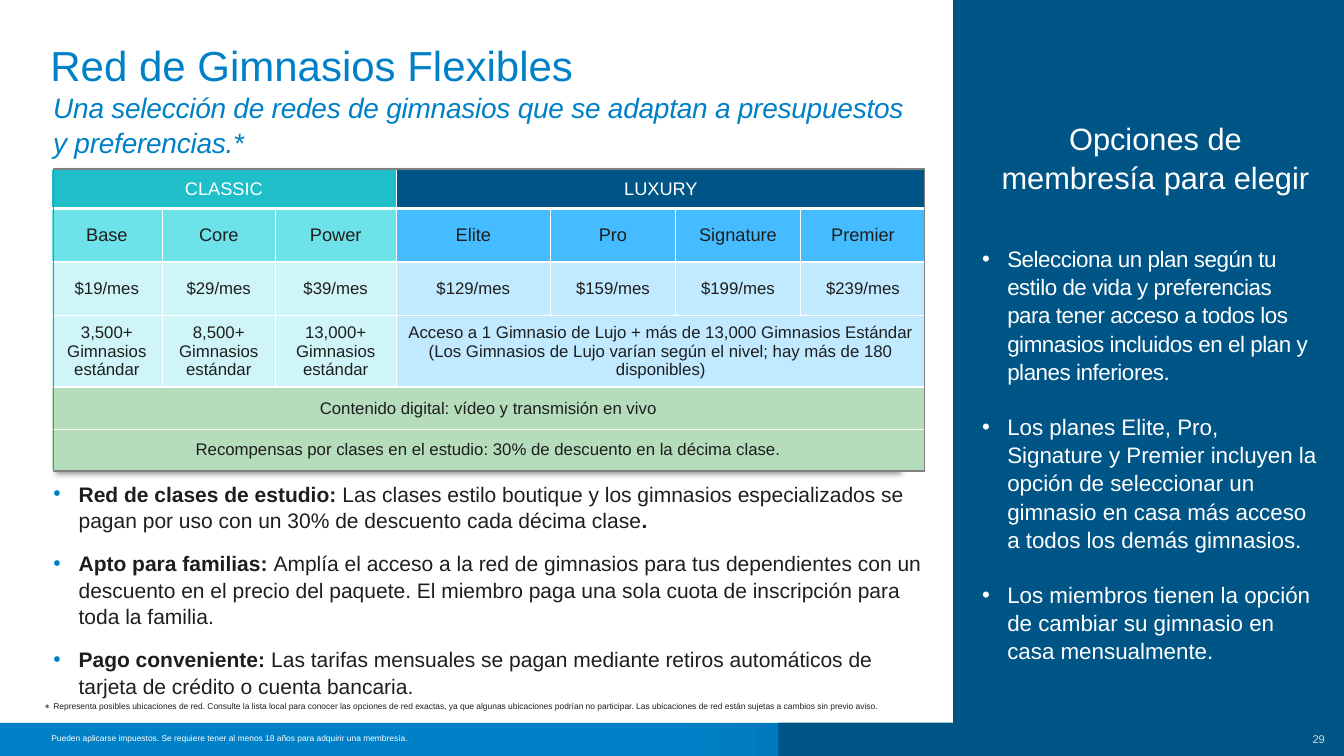
import dataclasses
import typing

import lxml.etree
import pptx
import pptx.dml.color
import pptx.enum.shapes
import pptx.enum.text
import pptx.oxml.ns
import pptx.util

Inches = pptx.util.Inches
Pt = pptx.util.Pt
Align = pptx.enum.text.PP_ALIGN
Anchor = pptx.enum.text.MSO_ANCHOR
Box = tuple[float, float, float, float]


@dataclasses.dataclass(frozen=True)
class Theme:
    font: str = "Arial"
    blue: str = "0080C7"
    navy: str = "005587"
    white: str = "FFFFFF"
    ink: str = "1E1E1E"
    number: str = "D9D9D9"
    frame: str = "808080"
    classic: tuple[str, str, str] = ("1FBFC9", "6EE2E9", "CFF5F8")
    luxury: tuple[str, str, str] = ("005587", "44BCFF", "C1E9FF")
    green: str = "B5DCBB"
    title: float = 30
    subtitle: float = 20
    heading: float = 22
    sidebar: float = 16
    body: float = 15
    plan: float = 13
    cell: float = 12
    small: float = 8
    fine: float = 6


THEME = Theme()


@dataclasses.dataclass(frozen=True)
class Panel:
    box: Box
    fill: str | None = None
    gradient_end: str | None = None
    line: str | None = None
    shadow: bool = False


@dataclasses.dataclass(frozen=True)
class Run:
    text: str
    bold: bool = False


@dataclasses.dataclass(frozen=True)
class TextBlock:
    box: Box
    paragraphs: list[list[Run]]
    size: float
    color: str
    align: Align = Align.LEFT
    anchor: Anchor = Anchor.TOP
    inset: tuple[float, float] = (0, 0)
    line_spacing: float = 1.0
    gap: float = 0
    bullet: str | None = None
    tracking: tuple[int, ...] = ()
    italic: bool = False


@dataclasses.dataclass(frozen=True)
class PlanCell:
    row: int
    column: int
    span: int
    text: str
    fill: str
    color: str = THEME.ink
    size: float = THEME.cell


def assign(target: typing.Any, values: dict[str, typing.Any]) -> None:
    for name, value in values.items():
        setattr(target, name, value)


def rgb(color: str) -> pptx.dml.color.RGBColor:
    return pptx.dml.color.RGBColor.from_string(color)


def add_element(parent: typing.Any, tag: str, **attributes: str) -> typing.Any:
    return lxml.etree.SubElement(parent, pptx.oxml.ns.qn(tag), attributes)


def add_panel(slide: typing.Any, panel: Panel) -> None:
    shape = slide.shapes.add_shape(pptx.enum.shapes.MSO_SHAPE.RECTANGLE, *map(Inches, panel.box))
    shape.shadow.inherit = False
    if panel.gradient_end:
        shape.fill.gradient()
        shape.fill.gradient_angle = 0
        for stop, color in zip(shape.fill.gradient_stops, (panel.fill, panel.gradient_end)):
            stop.color.rgb = rgb(color)
    elif panel.fill:
        shape.fill.solid()
        shape.fill.fore_color.rgb = rgb(panel.fill)
    else:
        shape.fill.background()
    if panel.line:
        shape.line.color.rgb = rgb(panel.line)
        shape.line.width = Pt(1.25)
    else:
        shape.line.fill.background()
    if panel.shadow:
        effects = shape.element.spPr.find(pptx.oxml.ns.qn("a:effectLst"))
        shadow = add_element(effects, "a:outerShdw", blurRad=str(Pt(4)), dist=str(Pt(3)), dir="2700000")
        add_element(add_element(shadow, "a:srgbClr", val="000000"), "a:alpha", val="40000")


def format_run(run: typing.Any, size: float, color: str, bold: bool = False, italic: bool = False) -> None:
    assign(run.font, {"name": THEME.font, "size": Pt(size), "bold": bold, "italic": italic})
    run.font.color.rgb = rgb(color)


def add_bullet(paragraph: typing.Any, color: str) -> None:
    properties = paragraph._p.get_or_add_pPr()
    assign(properties, {})
    properties.set("marL", str(Inches(0.25)))
    properties.set("indent", str(-Inches(0.25)))
    add_element(add_element(properties, "a:buClr"), "a:srgbClr", val=color)
    add_element(properties, "a:buFont", typeface=THEME.font)
    add_element(properties, "a:buChar", char="•")


def write_block(shape: typing.Any, block: TextBlock) -> None:
    assign(shape, dict(zip(("left", "top", "width", "height"), map(Inches, block.box))))
    frame = shape.text_frame
    side, end = map(Inches, block.inset)
    assign(frame, {"word_wrap": True, "auto_size": pptx.enum.text.MSO_AUTO_SIZE.NONE,
                   "vertical_anchor": block.anchor, "margin_left": side, "margin_right": side,
                   "margin_top": end, "margin_bottom": end})
    for index, runs in enumerate(block.paragraphs):
        paragraph = frame.add_paragraph() if index else frame.paragraphs[0]
        if block.bullet:
            add_bullet(paragraph, block.bullet)
        assign(paragraph, {"alignment": block.align, "line_spacing": block.line_spacing,
                           "space_before": Pt(block.gap if index else 0), "space_after": Pt(0)})
        for part in runs:
            run = paragraph.add_run()
            run.text = part.text
            format_run(run, block.size, block.color, part.bold, block.italic)
            if index < len(block.tracking):
                run._r.get_or_add_rPr().set("spc", str(block.tracking[index]))


def fill_placeholder(slide: typing.Any, index: int, block: TextBlock) -> None:
    shape = slide.placeholders[index]
    shape.element.getparent().append(shape.element)
    write_block(shape, block)


def add_borders(cell: typing.Any, bottom: float) -> None:
    properties = cell._tc.get_or_add_tcPr()
    for side, width in {"L": 1, "R": 1, "T": 1, "B": bottom}.items():
        line = add_element(properties, f"a:ln{side}", w=str(Pt(width)))
        add_element(add_element(line, "a:solidFill"), "a:srgbClr", val=THEME.white)


def plan_cells() -> list[PlanCell]:
    cells = [PlanCell(0, 0, 3, "CLASSIC", THEME.classic[0], THEME.white, THEME.plan),
             PlanCell(0, 3, 4, "LUXURY", THEME.luxury[0], THEME.white, THEME.plan)]
    plans = {"Base": 19, "Core": 29, "Power": 39, "Elite": 129, "Pro": 159, "Signature": 199, "Premier": 239}
    for column, (name, price) in enumerate(plans.items()):
        shades = THEME.classic if column < 3 else THEME.luxury
        cells += [PlanCell(1, column, 1, name, shades[1], size=THEME.plan),
                  PlanCell(2, column, 1, f"${price}/mes", shades[2])]
    for column, count in enumerate(("3,500+", "8,500+", "13,000+")):
        cells.append(PlanCell(3, column, 1, f"{count}\vGimnasios estándar", THEME.classic[2]))
    access = ("Acceso a 1 Gimnasio de Lujo + más de 13,000 Gimnasios Estándar\n"
              "(Los Gimnasios de Lujo varían según el nivel; hay más de 180 disponibles)")
    return cells + [
        PlanCell(3, 3, 4, access, THEME.luxury[2]),
        PlanCell(4, 0, 7, "Contenido digital: vídeo y transmisión en vivo", THEME.green),
        PlanCell(5, 0, 7, "Recompensas por clases en el estudio: 30% de descuento en la décima clase.", THEME.green)]


def add_plan_table(slide: typing.Any) -> None:
    widths, heights = (1.1, 1.12, 1.2, 1.53, 1.24, 1.24, 1.24), (0.39, 0.53, 0.53, 0.71, 0.42, 0.41)
    table = slide.shapes.add_table(len(heights), len(widths), *map(Inches, (0.51, 1.68, 8.65, 2.99))).table
    assign(table, {"first_row": False, "horz_banding": False})
    for column, width in zip(table.columns, widths):
        column.width = Inches(width)
    for row, height in zip(table.rows, heights):
        row.height = Inches(height)
    for plan in plan_cells():
        for column in range(plan.column, plan.column + plan.span):
            cell = table.cell(plan.row, column)
            add_borders(cell, 1 if plan.row else 3)
            cell.fill.solid()
            cell.fill.fore_color.rgb = rgb(plan.fill)
        cell = table.cell(plan.row, plan.column)
        if plan.span > 1:
            cell.merge(table.cell(plan.row, plan.column + plan.span - 1))
        cell.text = plan.text
        cell.vertical_anchor = Anchor.MIDDLE
        for paragraph in cell.text_frame.paragraphs:
            paragraph.alignment = Align.CENTER
            for run in paragraph.runs:
                format_run(run, plan.size, plan.color)


PANELS = [
    Panel((0, 7.17, 13.33, 0.33), THEME.blue),
    Panel((6.67, 7.17, 6.67, 0.33), THEME.blue, gradient_end=THEME.navy),
    Panel((7.72, 0, 5.61, 7.5), THEME.navy),
    Panel((0, 0, 9.45, 7.17), THEME.white),
    Panel((0.53, 1.68, 8.38, 2.99), THEME.white, shadow=True),
]
TABLE_FRAME = Panel((0.53, 1.68, 8.64, 2.99), line=THEME.frame)
PLACEHOLDERS = [
    TextBlock((0.5, 0.45, 8.47, 0.97), [[Run("Red de Gimnasios Flexibles")]], THEME.title, THEME.blue, line_spacing=0.9),
    TextBlock((0.53, 4.76, 8.64, 2.06), [
        [Run("Red de clases de estudio: ", True),
         Run("Las clases estilo boutique y los gimnasios especializados se pagan por uso con un 30% de descuento cada décima clase"),
         Run(".", True)],
        [Run("Apto para familias: ", True),
         Run("Amplía el acceso a la red de gimnasios para tus dependientes con un descuento en el precio del paquete. El miembro paga una sola cuota de inscripción para toda la familia.")],
        [Run("Pago conveniente: ", True),
         Run("Las tarifas mensuales se pagan mediante retiros automáticos de tarjeta de crédito o cuenta bancaria.")],
    ], THEME.body, THEME.ink, line_spacing=1.05, gap=12, bullet=THEME.blue),
    TextBlock((9.74, 2.42, 3.34, 4.04), [
        [Run("Selecciona un plan según tu estilo de vida y preferencias para tener acceso a todos los gimnasios incluidos en el plan y planes inferiores.")],
        [Run("Los planes Elite, Pro, Signature y Premier incluyen la opción de seleccionar un gimnasio en casa más acceso a todos los demás gimnasios.")],
        [Run("Los miembros tienen la opción de cambiar su gimnasio en casa mensualmente.")],
    ], THEME.sidebar, THEME.white, line_spacing=1.05, gap=19.3, bullet=THEME.white, tracking=(-30,)),
]
TEXT_BOXES = [
    TextBlock((0.43, 0.83, 8.74, 0.67),
              [[Run("Una selección de redes de gimnasios que se adaptan a presupuestos y preferencias.*")]],
              THEME.subtitle, THEME.blue, inset=(0.1, 0.05), line_spacing=1.05, tracking=(-20,), italic=True),
    TextBlock((9.88, 1.17, 3.16, 0.74), [[Run("Opciones de membresía para elegir")]],
              THEME.heading, THEME.white, Align.CENTER, line_spacing=1.05),
    TextBlock((0.51, 7.26, 6.77, 0.11),
              [[Run("Pueden aplicarse impuestos. Se requiere tener al menos 18 años para adquirir una membresía.")]],
              THEME.fine, THEME.white, anchor=Anchor.BOTTOM),
    TextBlock((0.53, 6.91, 8.47, 0.15),
              [[Run("Representa posibles ubicaciones de red. Consulte la lista local para conocer las opciones de red exactas, ya que algunas ubicaciones podrían no participar. Las ubicaciones de red están sujetas a cambios sin previo aviso.")]],
              THEME.fine, THEME.ink, anchor=Anchor.BOTTOM),
    TextBlock((0.35, 6.9, 0.22, 0.17), [[Run("*")]], THEME.small, THEME.ink, Align.RIGHT,
              inset=(0.1, 0.05), line_spacing=1.05, tracking=(-20,)),
    TextBlock((12.83, 7.17, 0.5, 0.33), [[Run("29")]], THEME.small, THEME.number, Align.CENTER, Anchor.MIDDLE),
]


def main() -> None:
    presentation = pptx.Presentation()
    assign(presentation, {"slide_width": Inches(13.33), "slide_height": Inches(7.5)})
    slide = presentation.slides.add_slide(presentation.slide_layouts.get_by_name("Two Content"))
    for panel in PANELS:
        add_panel(slide, panel)
    add_plan_table(slide)
    for index, block in enumerate(PLACEHOLDERS):
        fill_placeholder(slide, index, block)
    for block in TEXT_BOXES:
        write_block(slide.shapes.add_textbox(*map(Inches, block.box)), block)
    add_panel(slide, TABLE_FRAME)
    presentation.save("out.pptx")


if __name__ == "__main__":
    main()
